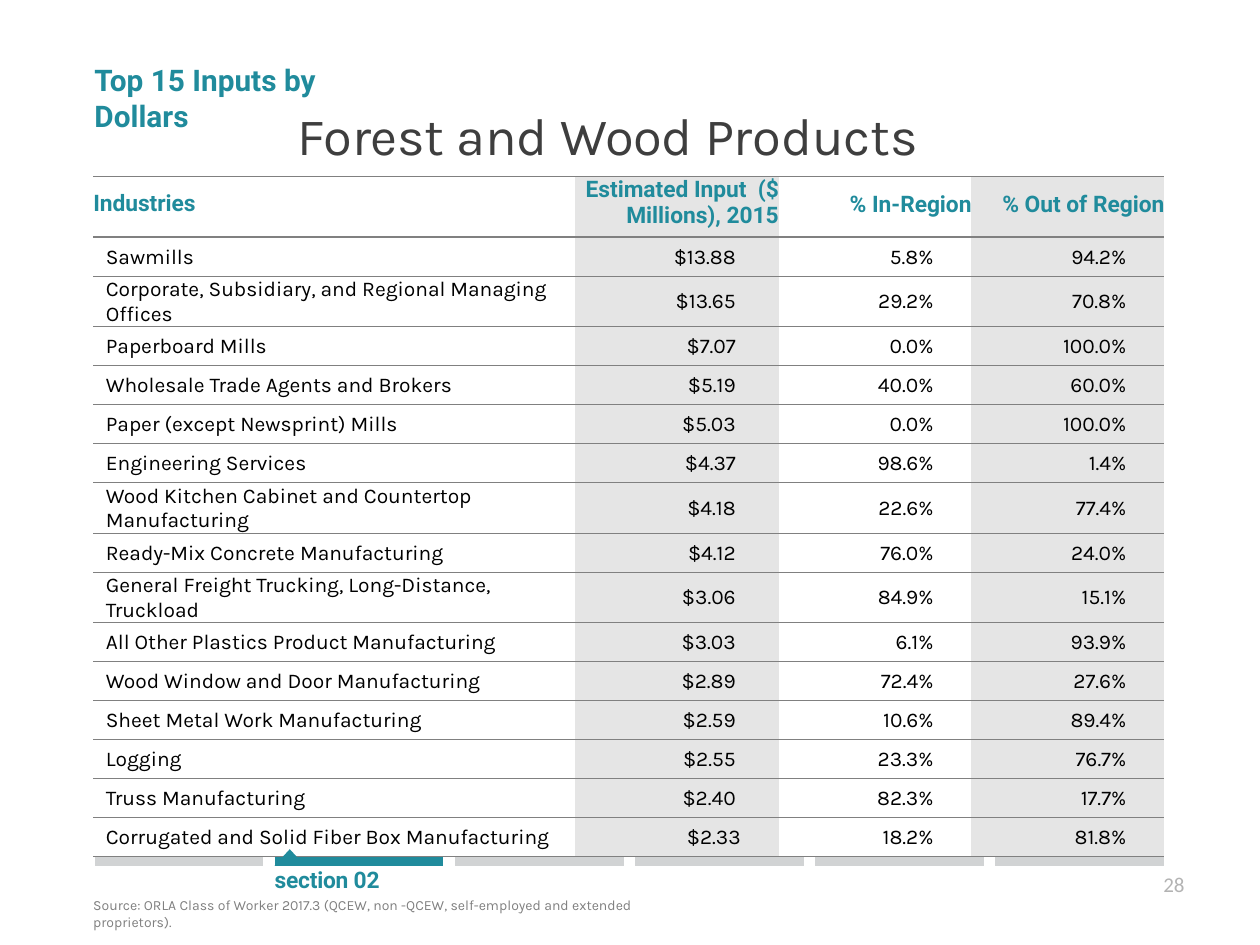
from dataclasses import dataclass

from lxml import etree
from pptx import Presentation
from pptx.dml.color import RGBColor
from pptx.enum.shapes import MSO_CONNECTOR, MSO_SHAPE
from pptx.enum.text import MSO_ANCHOR, PP_ALIGN
from pptx.oxml.ns import qn
from pptx.util import Inches, Pt

LEFT, CENTER, RIGHT = PP_ALIGN.LEFT, PP_ALIGN.CENTER, PP_ALIGN.RIGHT
TOP, MIDDLE = MSO_ANCHOR.TOP, MSO_ANCHOR.MIDDLE
STRAIGHT = MSO_CONNECTOR.STRAIGHT
TRIANGLE = MSO_SHAPE.ISOSCELES_TRIANGLE


@dataclass(frozen=True)
class Theme:
    accent: str = "208B9C"
    title: str = "3E3E3E"
    body: str = "000000"
    muted: str = "808080"
    page: str = "B3B3B3"
    shade: str = "E5E5E5"
    bar: str = "D1D3D4"
    heading_font: str = "Roboto"
    body_font: str = "Karla"
    page_font: str = "Calibri"
    title_size: float = 30
    heading_size: float = 17
    label_size: float = 13
    body_size: float = 12
    source_size: float = 8
    rule: float = 1
    hairline: float = 0.25
    bar_width: float = 5.28


THEME = Theme()
HEADERS = ["Industries", "Estimated Input  ($ Millions), 2015", "% In-Region", "% Out of Region"]
INPUTS = [
    ("Sawmills", "$13.88 ", "5.8%", "94.2%"),
    ("Corporate, Subsidiary, and Regional Managing Offices", "$13.65 ", "29.2%", "70.8%"),
    ("Paperboard Mills", "$7.07 ", "0.0%", "100.0%"),
    ("Wholesale Trade Agents and Brokers", "$5.19 ", "40.0%", "60.0%"),
    ("Paper (except Newsprint) Mills", "$5.03 ", "0.0%", "100.0%"),
    ("Engineering Services", "$4.37 ", "98.6%", "1.4%"),
    ("Wood Kitchen Cabinet and Countertop Manufacturing", "$4.18 ", "22.6%", "77.4%"),
    ("Ready-Mix Concrete Manufacturing", "$4.12 ", "76.0%", "24.0%"),
    ("General Freight Trucking, Long-Distance, Truckload", "$3.06 ", "84.9%", "15.1%"),
    ("All Other Plastics Product Manufacturing", "$3.03 ", "6.1%", "93.9%"),
    ("Wood Window and Door Manufacturing", "$2.89 ", "72.4%", "27.6%"),
    ("Sheet Metal Work Manufacturing", "$2.59 ", "10.6%", "89.4%"),
    ("Logging", "$2.55 ", "23.3%", "76.7%"),
    ("Truss Manufacturing", "$2.40 ", "82.3%", "17.7%"),
    ("Corrugated and Solid Fiber Box Manufacturing", "$2.33", "18.2%", "81.8%"),
]
COLUMN_WIDTHS = [3.82, 1.62, 1.53, 1.53]
SHADED_COLUMNS = (1, 3)
HEADER_HEIGHT, ROW_HEIGHT = 0.48, 0.31
HEADER_INSETS = [(0, 0.11, 0, 0), (0, 0, 0, 0), (0, 0.12, 0, 0), (0, 0.12, 0, 0)]
NAME_INSETS, VALUE_INSETS = (0.1, 0.01, 0.01, 0), (0.01, 0.01, 0.3, 0)
SECTION_COUNT, CURRENT_SECTION = 6, 1
BAR_LEFT, BAR_Y, BAR_LENGTH, BAR_PITCH = 0.75, 6.84, 1.34, 1.43


def write(paragraph, text, *, size, font, color, bold=False, align=LEFT,
          margin=0, indent=0, before=0, line=None, spacing=0):
    """Fill a paragraph; margin and indent are inches, spacing is points."""
    paragraph.alignment = align
    paragraph.space_before = Pt(before)
    if line:
        paragraph.line_spacing = Pt(line)
    properties = paragraph._p.get_or_add_pPr()
    properties.set("marL", str(Inches(margin)))
    properties.set("indent", str(Inches(indent)))
    run = paragraph.add_run()
    run.text = text
    run.font.size = Pt(size)
    run.font.name = font
    run.font.bold = bold
    run.font.color.rgb = RGBColor.from_string(color)
    if spacing:
        run.font._element.set("spc", str(round(spacing * 100)))


def set_insets(target, insets):
    (target.margin_left, target.margin_top,
     target.margin_right, target.margin_bottom) = map(Inches, insets)


def set_borders(cell, top, bottom, color):
    """Rule a cell above and below, with open sides."""
    properties = cell._tc.get_or_add_tcPr()
    edges = [("a:lnL", None), ("a:lnR", None), ("a:lnT", top), ("a:lnB", bottom)]
    for position, (tag, width) in enumerate(edges):
        edge = etree.Element(qn(tag), w=str(Pt(width or 0)))
        if width:
            fill = etree.SubElement(edge, qn("a:solidFill"))
            etree.SubElement(fill, qn("a:srgbClr"), val=color)
        else:
            etree.SubElement(edge, qn("a:noFill"))
        properties.insert(position, edge)


class SlideBuilder:
    def __init__(self, slide, theme):
        self.shapes = slide.shapes
        self.theme = theme

    def text(self, box, paragraphs, insets=(0, 0, 0, 0), anchor=TOP):
        frame = self.shapes.add_textbox(*map(Inches, box)).text_frame
        frame.word_wrap = True
        frame.vertical_anchor = anchor
        set_insets(frame, insets)
        for index, (content, style) in enumerate(paragraphs):
            paragraph = frame.add_paragraph() if index else frame.paragraphs[0]
            write(paragraph, content, **style)

    def bar(self, x, y, length, color):
        line = self.shapes.add_connector(
            STRAIGHT, Inches(x), Inches(y), Inches(x + length), Inches(y))
        line.line.color.rgb = RGBColor.from_string(color)
        line.line.width = Pt(self.theme.bar_width)
        etree.SubElement(line._element.spPr, qn("a:effectLst"))

    def marker(self, box):
        triangle = self.shapes.add_shape(TRIANGLE, *map(Inches, box))
        triangle.shadow.inherit = False
        triangle.fill.solid()
        triangle.fill.fore_color.rgb = RGBColor.from_string(self.theme.accent)
        triangle.line.fill.background()

    def cell(self, cell, content, insets, anchor, shaded, rules, **style):
        set_insets(cell, insets)
        cell.vertical_anchor = anchor
        if shaded:
            cell.fill.solid()
            cell.fill.fore_color.rgb = RGBColor.from_string(self.theme.shade)
        else:
            cell.fill.background()
        set_borders(cell, *rules, self.theme.muted)
        write(cell.text_frame.paragraphs[0], content, **style)

    def inputs_table(self, x, y):
        theme = self.theme
        height = HEADER_HEIGHT + ROW_HEIGHT * len(INPUTS)
        table = self.shapes.add_table(
            len(INPUTS) + 1, len(HEADERS), Inches(x), Inches(y),
            Inches(sum(COLUMN_WIDTHS)), Inches(height)).table
        table.first_row = table.horz_banding = False
        for column, width in zip(table.columns, COLUMN_WIDTHS):
            column.width = Inches(width)
        header_style = dict(size=theme.label_size, font=theme.heading_font,
                            color=theme.accent, bold=True, before=5.9)
        body_style = dict(size=theme.body_size, font=theme.body_font, color=theme.body)
        for r, values in enumerate([HEADERS, *INPUTS]):
            table.rows[r].height = Inches(ROW_HEIGHT if r else HEADER_HEIGHT)
            rules = (theme.rule if r <= 1 else theme.hairline,
                     theme.rule if r in (0, len(INPUTS)) else theme.hairline)
            for c, value in enumerate(values):
                if r:
                    insets, anchor, style = VALUE_INSETS if c else NAME_INSETS, MIDDLE, body_style
                else:
                    insets, anchor, style = HEADER_INSETS[c], TOP, header_style
                self.cell(table.cell(r, c), value, insets, anchor, c in SHADED_COLUMNS,
                          rules, align=RIGHT if c else LEFT, **style)


def main():
    deck = Presentation()
    deck.slide_width, deck.slide_height = Inches(10), Inches(7.5)
    builder = SlideBuilder(deck.slides.add_slide(deck.slide_layouts[6]), THEME)

    builder.inputs_table(0.74, 1.4)
    for section in range(SECTION_COUNT):
        color = THEME.accent if section == CURRENT_SECTION else THEME.bar
        builder.bar(BAR_LEFT + section * BAR_PITCH, BAR_Y, BAR_LENGTH, color)
    builder.marker((BAR_LEFT + CURRENT_SECTION * BAR_PITCH, 6.74, 0.24, 0.13))

    accent = dict(font=THEME.heading_font, color=THEME.accent, bold=True)
    builder.text((0.74, 0.82, 8.16, 0.53), [
        ("Forest and Wood Products", dict(
            size=THEME.title_size, font=THEME.body_font, color=THEME.title,
            align=CENTER, margin=0.01, before=1, spacing=-0.1)),
    ], insets=(0.1, 0.01, 0.1, 0.05), anchor=MIDDLE)
    builder.text((0.73, 6.87, 4.67, 0.39), [
        ("section 02", dict(size=THEME.label_size, margin=1.45, line=15.5,
                            spacing=-0.1, **accent)),
        ("Source: ORLA Class of Worker 2017.3 (QCEW, non -QCEW, self-employed "
         "and extended proprietors).", dict(
             size=THEME.source_size, font=THEME.body_font, color=THEME.muted,
             margin=0.01, before=2)),
    ])
    builder.text((7.17, 6.95, 2.33, 0.4), [
        ("28", dict(size=THEME.body_size, font=THEME.page_font, color=THEME.page,
                    align=RIGHT, margin=0.03, line=8.6)),
    ], insets=(0.1, 0.05, 0.1, 0.05))
    builder.text((0.74, 0.48, 2.16, 0.31), [
        ("Top 15 Inputs by Dollars", dict(
            size=THEME.heading_size, margin=0.01, before=1.1, **accent)),
    ], insets=(0, 0.01, 0, 0))
    deck.save("out.pptx")


if __name__ == "__main__":
    main()
